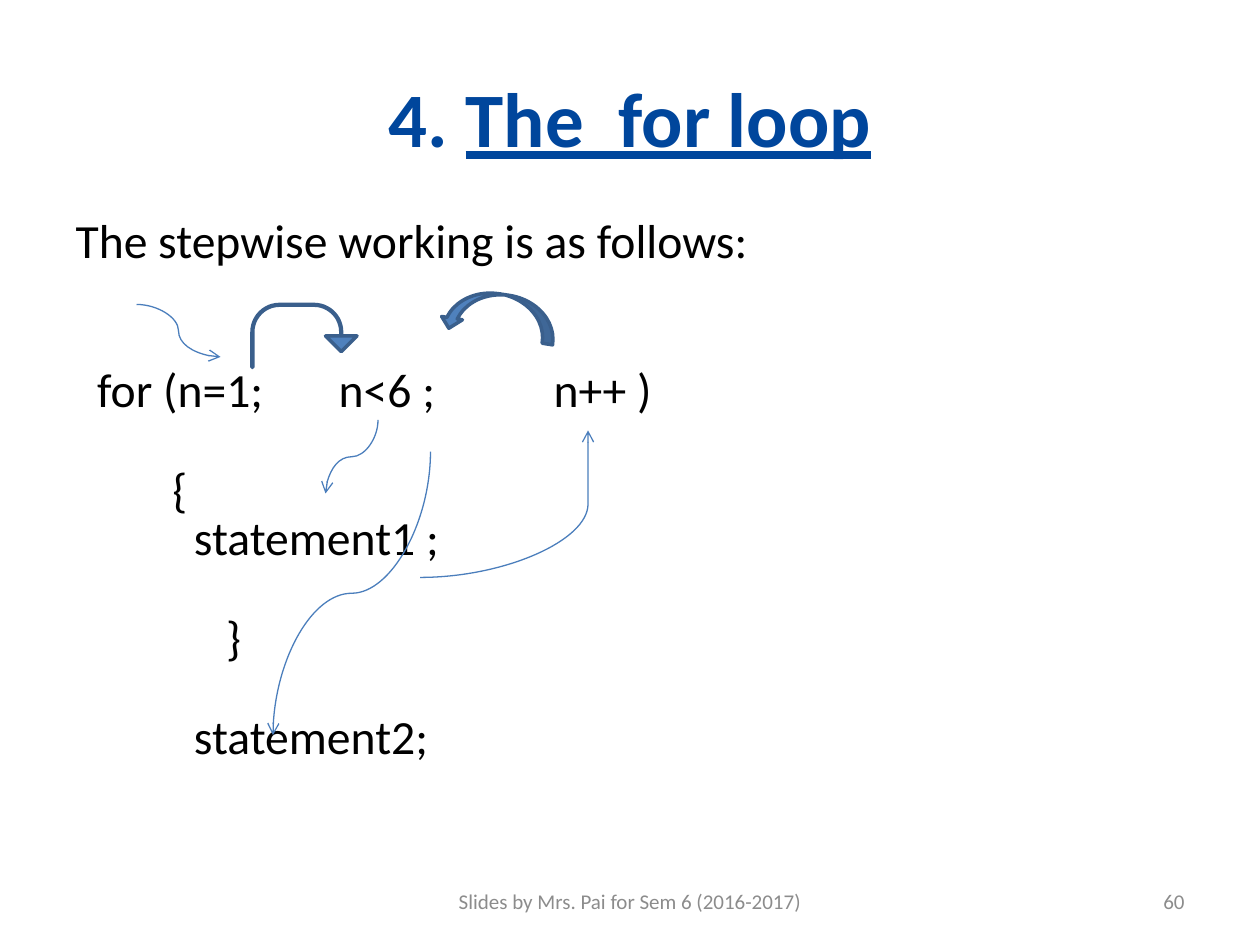
"""Build a slide that traces the order of execution in a for loop."""
from pptx import Presentation
from pptx.dml.color import RGBColor
from pptx.enum.shapes import MSO_CONNECTOR, MSO_SHAPE
from pptx.enum.text import MSO_ANCHOR, MSO_AUTO_SIZE, PP_ALIGN
from pptx.oxml.ns import qn
from pptx.util import Pt
from lxml.etree import SubElement

COLORS = {"title": "00469C", "text": "000000", "footer": "8C8C8C",
          "arrow": "4B7EBC", "fill": "4F81BD", "outline": "3A5F8C"}
FONT = "Calibri"
TITLE = [("4. ", False), ("The  for loop", True)]
CODE_LINES = [
    ([("The stepwise working is as follows:", 0)], 0, 0),
    ([("for (n=1;", 0), (" ", 36.9), ("n<6 ;", 0), (" ", 61.5), ("n++ )", 0)], 12.3, 2),
    ([("{", 0)], 55.3, 1),
    ([("statement1 ;", 0)], 67.6, 0),
    ([("}", 0)], 86, 1),
    ([("statement2;", 0)], 67.6, 1),
]
CODE_SIZE, LINE_PITCH, LINE_GAP = 27.2, 28.65, 5.1
FOOTERS = [
    ("Slides by Mrs. Pai for Sem 6 (2016-2017)", (246, 500.5, 228, 28.75), PP_ALIGN.CENTER),
    ("60", (516, 500.5, 168, 28.75), PP_ALIGN.RIGHT),
]
CURVES = [
    ((78, 174), (126, 204), False, None),
    ((216, 240), (186, 282), True, None),
    ((246, 258), (156, 420), True, None),
    ((240, 330), (336, 246), False, 100000),
]
BLOCK_ARROWS = [
    (MSO_SHAPE.CURVED_UP_ARROW, (252, 168, 66, 24), 189.1, []),
    (MSO_SHAPE.U_TURN_ARROW, (144, 174, 60, 36), 0, [0.012, 0.25, 0.25, 0.438, 0.75]),
]


def color(name):
    return RGBColor.from_string(COLORS[name])


def place(shape, box):
    shape.left, shape.top, shape.width, shape.height = map(Pt, box)


def format_font(font, size, color_name):
    font.name, font.size = FONT, Pt(size)
    font.color.rgb = color(color_name)


def add_title(slide):
    title = slide.shapes.title
    place(title, (36, 21.6, 648, 90))
    title.text_frame.vertical_anchor = MSO_ANCHOR.MIDDLE
    paragraph = title.text_frame.paragraphs[0]
    paragraph.alignment = PP_ALIGN.CENTER
    format_font(paragraph.font, 44, "title")
    paragraph.font.bold = True
    for text, underlined in TITLE:
        run = paragraph.add_run()
        run.text = text
        run.font.underline = underlined


def add_code(slide):
    body = slide.placeholders[1]
    place(body, (36, 126, 648, 356.4))
    frame = body.text_frame
    frame.auto_size = MSO_AUTO_SIZE.NONE
    for index, (parts, indent, skipped) in enumerate(CODE_LINES):
        paragraph = frame.add_paragraph() if index else frame.paragraphs[0]
        paragraph.line_spacing = 0.7
        paragraph.space_before = Pt(LINE_GAP + skipped * LINE_PITCH)
        properties = paragraph._p.get_or_add_pPr()
        properties.set("marL", str(Pt(indent)))
        properties.set("indent", "0")
        SubElement(properties, qn("a:buNone"))
        format_font(paragraph.font, CODE_SIZE, "text")
        for text, spacing in parts:
            run = paragraph.add_run()
            run.text = text
            if spacing:
                run._r.get_or_add_rPr().set("spc", str(round(spacing * 100)))


def add_footer(slide, text, box, alignment):
    frame = slide.shapes.add_textbox(*map(Pt, box)).text_frame
    frame.word_wrap = True
    frame.vertical_anchor = MSO_ANCHOR.MIDDLE
    paragraph = frame.paragraphs[0]
    paragraph.text = text
    paragraph.alignment = alignment
    format_font(paragraph.font, 12, "footer")


def add_curve(slide, start, end, vertical, bend):
    if vertical:
        center_x, center_y = (start[0] + end[0]) / 2, (start[1] + end[1]) / 2
        half_width, half_height = (end[1] - start[1]) / 2, (start[0] - end[0]) / 2
        start = center_x - half_width, center_y - half_height
        end = center_x + half_width, center_y + half_height
    connector = slide.shapes.add_connector(MSO_CONNECTOR.CURVE, *map(Pt, start + end))
    connector.line.color.rgb = color("arrow")
    connector.line.width = Pt(0.75)
    properties = connector._element.spPr
    if vertical:
        properties.find(qn("a:xfrm")).set("rot", str(90 * 60000))
    if bend is not None:
        adjustments = properties.find(qn("a:prstGeom")).find(qn("a:avLst"))
        SubElement(adjustments, qn("a:gd"), name="adj1", fmla=f"val {bend}")
    SubElement(properties.find(qn("a:ln")), qn("a:tailEnd"), type="arrow")
    SubElement(properties, qn("a:effectLst"))


def add_block_arrow(slide, kind, box, rotation, adjustments):
    arrow = slide.shapes.add_shape(kind, *map(Pt, box))
    arrow.rotation = rotation
    for index, value in enumerate(adjustments):
        arrow.adjustments[index] = value
    arrow.shadow.inherit = False
    arrow.fill.solid()
    arrow.fill.fore_color.rgb = color("fill")
    arrow.line.color.rgb = color("outline")
    arrow.line.width = Pt(2)


def main():
    presentation = Presentation()
    presentation.slide_width, presentation.slide_height = Pt(720), Pt(540)
    slide = presentation.slides.add_slide(presentation.slide_layouts[1])
    add_title(slide)
    add_code(slide)
    for curve in CURVES:
        add_curve(slide, *curve)
    for block_arrow in BLOCK_ARROWS:
        add_block_arrow(slide, *block_arrow)
    for footer in FOOTERS:
        add_footer(slide, *footer)
    presentation.save("out.pptx")


if __name__ == "__main__":
    main()
